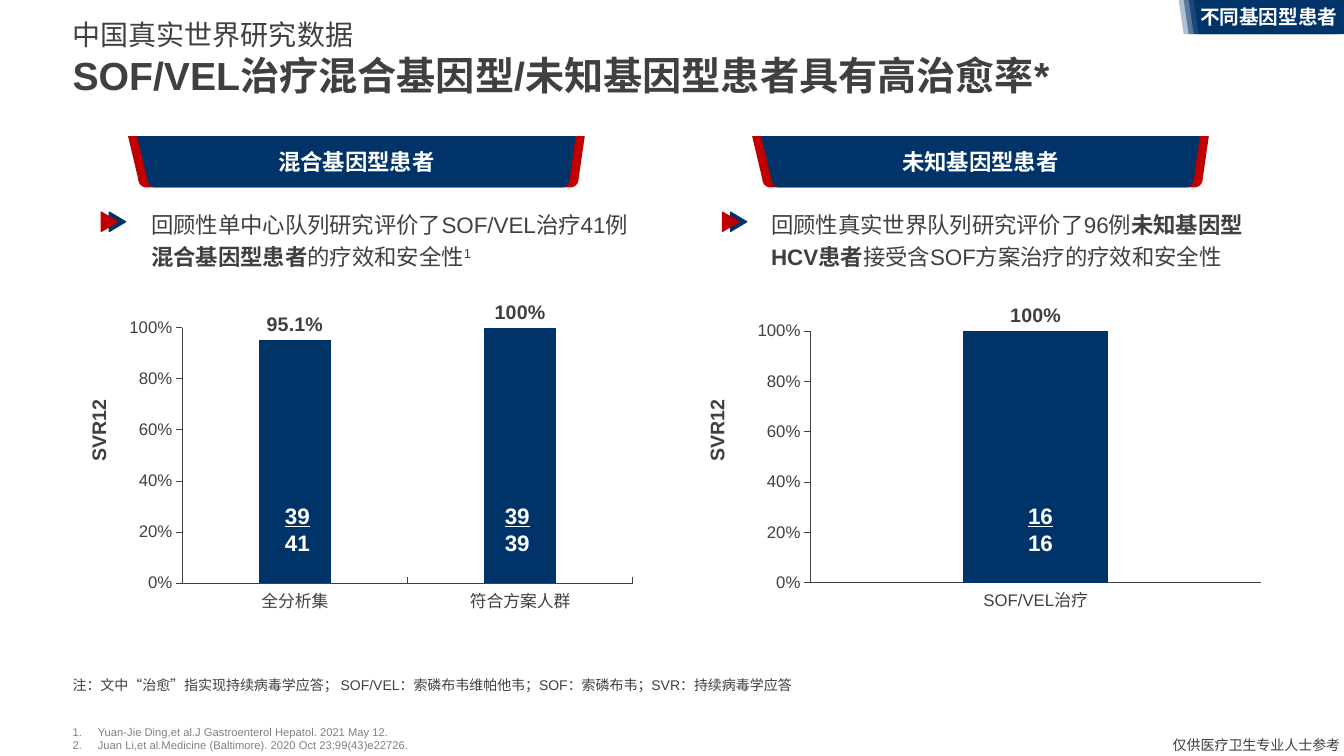
from math import cos, pi, sin

from lxml import etree
from pptx import Presentation
from pptx.chart.data import CategoryChartData
from pptx.dml.color import RGBColor
from pptx.enum.chart import XL_CHART_TYPE, XL_LABEL_POSITION, XL_TICK_MARK
from pptx.enum.shapes import MSO_SHAPE
from pptx.enum.text import MSO_ANCHOR, MSO_AUTO_SIZE, PP_ALIGN
from pptx.oxml.ns import qn
from pptx.util import Inches, Pt

NAVY = RGBColor(0x00, 0x34, 0x69)
RED = RGBColor(0xC0, 0x00, 0x00)
DARK = RGBColor(0x40, 0x40, 0x40)
GRAY = RGBColor(0x80, 0x80, 0x80)
WHITE = RGBColor(0xFF, 0xFF, 0xFF)
LEFT, CENTER, RIGHT = PP_ALIGN.LEFT, PP_ALIGN.CENTER, PP_ALIGN.RIGHT
TOP, MIDDLE, BOTTOM = MSO_ANCHOR.TOP, MSO_ANCHOR.MIDDLE, MSO_ANCHOR.BOTTOM
LATIN, HAN = "Arial", "Noto Sans CJK SC"

TITLE = "中国真实世界研究数据\vSOF/VEL治疗混合基因型/未知基因型患者具有高治愈率*"
REFS = ["Yuan-Jie Ding,et al.J Gastroenterol Hepatol. 2021 May 12.",
        "Juan Li,et al.Medicine (Baltimore). 2020 Oct 23;99(43)e22726."]
NOTE = ("注：文中“治愈”指实现持续病毒学应答； SOF/VEL：索磷布韦维帕他韦；"
        "SOF：索磷布韦；SVR：持续病毒学应答")
FOOTER = "仅供医疗卫生专业人士参考"
TAB = "不同基因型患者"
PANELS = [
    dict(head="混合基因型患者", head_x=1.27, mark_x=0.99, axis_x=0.57,
         text=[("回顾性单中心队列研究评价了SOF/VEL治疗41例", ""),
               ("混合基因型患者", "bold"), ("的疗效和安全性", ""), ("1", "super")],
         text_box=(1.4, 1.99, 5.12, 0.72), chart_box=(1.14, 2.8, 5.14, 3.36),
         cats=["全分析集", "符合方案人群"], vals=[0.951, 1], tick=XL_TICK_MARK.INSIDE,
         counts=[(2.22, 1.46, "39", "41"), (4.4, 1.46, "39", "39")]),
    dict(head="未知基因型患者", head_x=7.46, mark_x=7.15, axis_x=6.7,
         text=[("回顾性真实世界队列研究评价了96例", ""), ("未知基因型HCV患者", "bold"),
               ("接受含SOF方案治疗的疗效和安全性", "")],
         text_box=(7.55, 1.99, 5.06, 0.72), chart_box=(7.37, 2.84, 5.14, 3.31),
         cats=["SOF/VEL治疗"], vals=[1], tick=XL_TICK_MARK.NONE,
         counts=[(9.54, 1.56, "16", "16")]),
]


def style(run, size, color=DARK, bold=False, font=LATIN):
    run.font.size, run.font.bold, run.font.name = Pt(size), bold, font
    run.font.color.rgb = color
    etree.SubElement(run._r.get_or_add_rPr(), qn("a:ea"), typeface=HAN)


def place(shape, box):
    shape.left, shape.top, shape.width, shape.height = map(Inches, box)


def set_up(frame, anchor, margins):
    frame.auto_size = MSO_AUTO_SIZE.NONE
    frame.vertical_anchor = anchor
    (frame.margin_left, frame.margin_top,
     frame.margin_right, frame.margin_bottom) = map(Inches, margins)


def add_text(box, lines, size, color=DARK, bold=False, align=LEFT, anchor=TOP,
             margins=(0.1, 0.05, 0.1, 0.05), font=LATIN, wrap=True):
    shape = slide.shapes.add_textbox(*map(Inches, box))
    frame = shape.text_frame
    frame.word_wrap = wrap
    set_up(frame, anchor, margins)
    frame.text = "\n".join(lines)
    for para in frame.paragraphs:
        para.alignment = align
        for run in para.runs:
            style(run, size, color, bold, font)
    return shape


def fill(shape, color, line=False):
    shape.shadow.inherit = False
    shape.fill.solid()
    shape.fill.fore_color.rgb = color
    if line:
        shape.line.color.rgb = color
        shape.line.width = Pt(1)
    else:
        shape.line.fill.background()


def add_outline(points, color):
    points = [(Inches(x), Inches(y)) for x, y in points]
    pen = slide.shapes.build_freeform(*points[0])
    pen.add_line_segments(points[1:], close=True)
    shape = pen.convert_to_shape()
    fill(shape, color)
    return shape


def add_banner(x, wide, color):
    """Draw a tapering band with rounded lower corners."""
    top, bend, low, end = 1.35, 1.77, 1.86, x + wide
    turns = [i * pi / 12 for i in range(7)]
    right = [(end - 0.14 + 0.08 * cos(t), bend + (low - bend) * sin(t)) for t in turns]
    left = [(x + 0.18 - 0.08 * cos(t), bend + (low - bend) * sin(t)) for t in turns]
    return add_outline([(x, top), (end, top), *right, *left[::-1]], color)


def add_bars(panel):
    data = CategoryChartData(number_format="0%")
    data.categories = panel["cats"]
    data.add_series("Series 1", panel["vals"])
    chart = slide.shapes.add_chart(XL_CHART_TYPE.COLUMN_CLUSTERED,
                                   *map(Inches, panel["chart_box"]), data).chart
    chart.has_legend = chart.has_title = False
    chart.font.name = LATIN
    for axis, tick in ((chart.category_axis, panel["tick"]),
                       (chart.value_axis, XL_TICK_MARK.OUTSIDE)):
        axis.major_tick_mark, axis.minor_tick_mark = tick, XL_TICK_MARK.NONE
        axis.has_major_gridlines = False
        axis.format.line.color.rgb = DARK
        axis.format.line.width = Pt(0.5)
        font = axis.tick_labels.font
        font.size, font.name, font.color.rgb = Pt(12), LATIN, DARK
    scale = chart.value_axis
    scale.minimum_scale, scale.maximum_scale, scale.major_unit = 0, 1, 0.2
    scale.tick_labels.number_format = "0%"
    scale.tick_labels.number_format_is_linked = False
    plot = chart.plots[0]
    plot.gap_width, plot.overlap, plot.vary_by_categories = 210, -10, False
    bars = plot.series[0].format.fill
    bars.solid()
    bars.fore_color.rgb = NAVY
    plot.has_data_labels = True
    labels = plot.data_labels
    labels.show_value, labels.position = True, XL_LABEL_POSITION.OUTSIDE_END
    labels.number_format, labels.number_format_is_linked = "[<1]0.0%;0%", False
    font = labels.font
    font.size, font.bold, font.name, font.color.rgb = Pt(14), True, LATIN, DARK
    area = chart._chartSpace.find(".//" + qn("c:plotArea"))
    for old in area.findall(qn("c:layout")):
        area.remove(old)
    layout = etree.Element(qn("c:layout"))
    area.insert(0, layout)
    manual = etree.SubElement(layout, qn("c:manualLayout"))
    for tag, val in (("layoutTarget", "inner"), ("xMode", "edge"), ("yMode", "edge"),
                     ("x", "0.13"), ("y", "0.134"), ("w", "0.87"), ("h", "0.755")):
        etree.SubElement(manual, qn("c:" + tag), val=val)


def add_panel(panel):
    x = panel["head_x"]
    add_banner(x, 4.53, RED)
    frame = add_banner(x + 0.09, 4.35, NAVY).text_frame
    frame.text = panel["head"]
    frame.vertical_anchor = MIDDLE
    frame.paragraphs[0].alignment = CENTER
    style(frame.paragraphs[0].runs[0], 16, WHITE, True)

    para = add_text(panel["text_box"], [], 16).text_frame.paragraphs[0]
    para.line_spacing = 1.2
    for words, kind in panel["text"]:
        run = para.add_run()
        run.text = words
        style(run, 16, bold=kind == "bold")
        if kind == "super":
            run._r.get_or_add_rPr().set("baseline", "30000")

    add_bars(panel)
    add_text((panel["axis_x"], 4.1, 0.82, 0.34), ["SVR12"], 14, bold=True,
             wrap=False).rotation = 270
    for left, wide, cured, total in panel["counts"]:
        box = add_text((left, 4.93, wide, 0.64), [cured, total], 16, WHITE, True, CENTER)
        box.text_frame.paragraphs[0].runs[0].font.underline = True
    for shift, color in ((0.08, NAVY), (0, RED)):
        mark = slide.shapes.add_shape(MSO_SHAPE.ISOSCELES_TRIANGLE, *map(
            Inches, (panel["mark_x"] + shift, 2.12, 0.19, 0.16)))
        mark.rotation = 90
        fill(mark, color, line=True)


deck = Presentation()
deck.slide_width, deck.slide_height = Inches(13.33), Inches(7.5)
slide = deck.slides.add_slide(deck.slide_layouts[1])
title, refs = slide.placeholders

place(title, (0.72, 0, 11.89, 1.15))
set_up(title.text_frame, MIDDLE, (0, 0, 0, 0))
title.text_frame.text = TITLE
para = title.text_frame.paragraphs[0]
para.alignment = LEFT
for run, size, bold in zip(para.runs, (20, 28), (False, True)):
    style(run, size, bold=bold)
etree.SubElement(para._p.find(qn("a:br")), qn("a:rPr"), sz="2000")

place(refs, (0.72, 6.88, 10.77, 0.62))
set_up(refs.text_frame, BOTTOM, (0, 0, 0, 0.04))
refs.text_frame.text = "\n".join(REFS)
for para in refs.text_frame.paragraphs:
    props = para._p.get_or_add_pPr()
    props.set("marL", str(Inches(0.25)))
    props.set("indent", str(-Inches(0.25)))
    etree.SubElement(props, qn("a:buFont"), typeface=LATIN)
    etree.SubElement(props, qn("a:buAutoNum"), type="arabicPeriod")
    para.space_before = Pt(0)
    style(para.runs[0], 8, GRAY)

for panel in PANELS:
    add_panel(panel)

note = add_text((0.72, 6.67, 12.26, 0.21), [NOTE], 10, anchor=MIDDLE, margins=(0, 0, 0, 0))
note.text_frame.paragraphs[0].line_spacing = 1.2
add_text((11.33, 7.26, 2.06, 0.27), [FOOTER], 10, align=RIGHT, font=HAN)
for i, alpha in enumerate((30, 50, 70, 100)):
    x = 11.69 + 0.05 * i
    flag = add_outline([(x, 0), (x + 1.5, 0), (x + 1.5, 0.34), (x + 0.05, 0.34)], NAVY)
    if alpha < 100:
        tint = flag._element.spPr.find(qn("a:solidFill"))[0]
        etree.SubElement(tint, qn("a:alpha"), val=str(alpha * 1000))
add_text((11.87, 0.05, 1.43, 0.24), [TAB], 14, WHITE, True, CENTER, MIDDLE, (0, 0, 0, 0))

deck.save("out.pptx")
